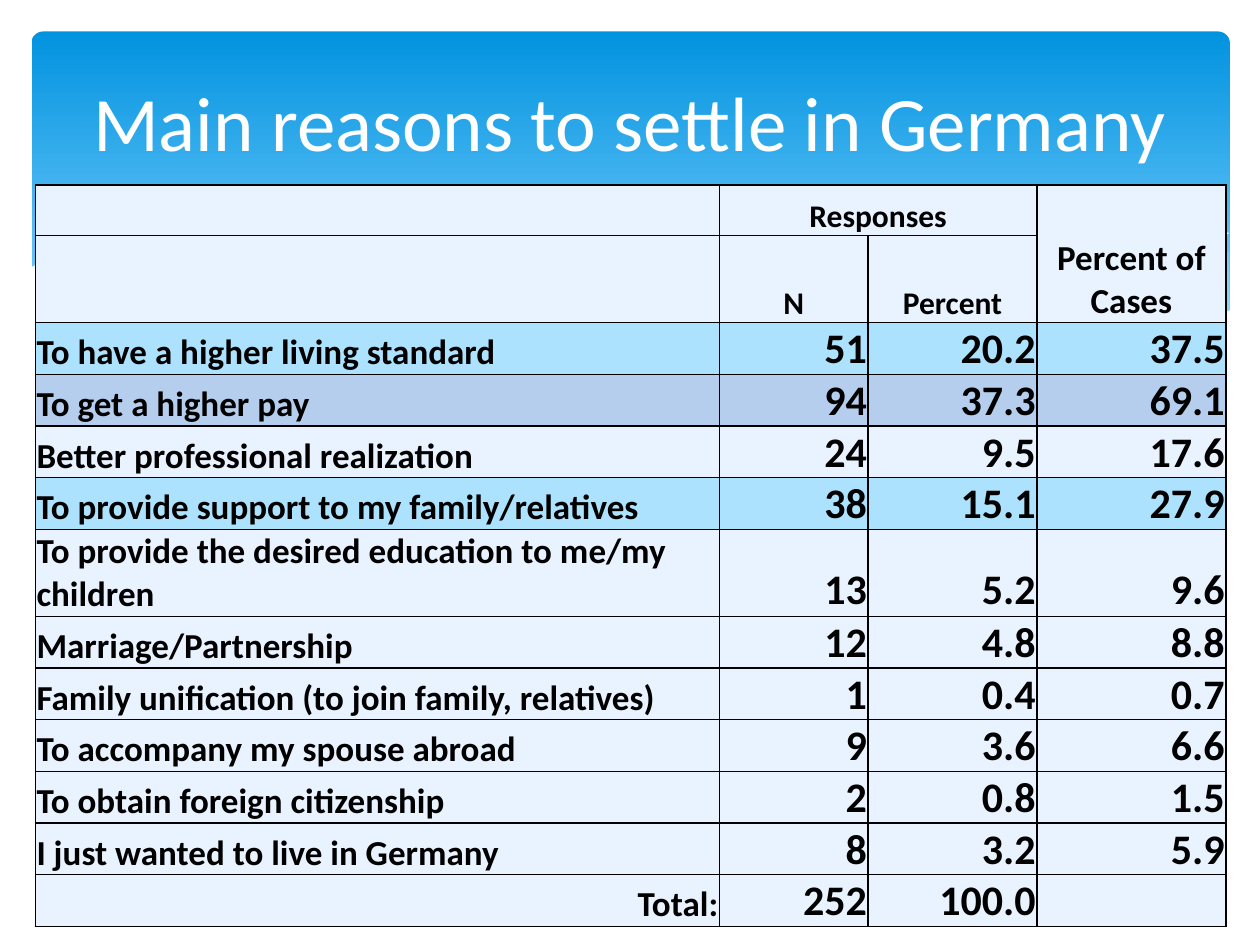
from dataclasses import dataclass

import pptx
import pptx.util
import pptx.dml.color
import pptx.enum.shapes
import pptx.enum.text
import pptx.oxml
import pptx.oxml.ns

Inches = pptx.util.Inches
Pt = pptx.util.Pt
ALIGN = pptx.enum.text.PP_ALIGN
ANCHOR = pptx.enum.text.MSO_ANCHOR


@dataclass(frozen=True)
class Theme:
    font: str = "Calibri"
    white: str = "FFFFFF"
    black: str = "000000"
    band_top: str = "0293E0"
    band_bottom: str = "83D3FE"
    wave: str = "C6E7FC"
    plain: str = "E8F3FF"
    notable: str = "ADE2FE"
    leading: str = "B5CEED"
    title_size: int = 44
    header_size: int = 18
    label_size: int = 20
    value_size: int = 24


THEME = Theme()

# Wave outlines, in inches from the top left of the header band.
RIGHT_WAVE = [
    (9.5, 1.75), (9.1, 1.82), (8.66, 1.91), (8.36, 1.98), (7.54, 2.17), (6.81, 2.32),
    (6.36, 2.4), (6.8, 2.46), (7.2, 2.5), (7.67, 2.52), (8.1, 2.52), (8.47, 2.49),
    (8.8, 2.44), (9.1, 2.37), (9.38, 2.27), (9.51, 2.22)]
MIDDLE_WAVE = [
    (8.68, 2.48), (8.12, 2.4), (7.5, 2.29), (6.81, 2.15), (6.04, 1.97), (5.59, 1.86),
    (5.16, 1.78), (4.77, 1.71), (4.4, 1.66), (3.95, 1.62), (3.55, 1.6), (3.19, 1.61),
    (2.88, 1.63), (2.61, 1.66), (3.17, 1.74), (3.79, 1.86), (4.66, 2.07), (5.41, 2.23),
    (6.09, 2.36), (6.7, 2.45), (7.23, 2.51), (7.71, 2.53), (8.13, 2.53), (8.51, 2.5)]
LONG_LINE = [
    (2.84, 1.7), (3.19, 1.65), (3.62, 1.62), (4.08, 1.62), (4.64, 1.65), (5.31, 1.72),
    (6.11, 1.83), (7.02, 2.01), (7.7, 2.16), (8.44, 2.36), (8.82, 2.47)]
SHORT_LINE = [
    (5.88, 2.32), (6.47, 2.16), (7.23, 1.98), (8.11, 1.79), (8.7, 1.69), (9.13, 1.63),
    (9.5, 1.6)]
WHITE_WAVE = [
    (9.52, 2.21), (9.25, 2.31), (8.95, 2.4), (8.62, 2.46), (8.25, 2.5), (7.84, 2.52),
    (7.36, 2.5), (6.83, 2.45), (6.23, 2.37), (5.54, 2.25), (4.78, 2.08), (4.22, 1.95),
    (3.66, 1.82), (3.15, 1.72), (2.67, 1.65), (2.25, 1.61), (1.86, 1.59), (1.52, 1.59),
    (1.21, 1.6), (0.94, 1.62), (0.7, 1.66), (0.51, 1.7), (0.34, 1.74), (0.21, 1.78),
    (0.11, 1.82), (0.04, 1.85), (-0.02, 1.88), (-0.02, 3.04), (9.52, 3.04)]

REASONS = [
    ("To have a higher living standard", "51", "20.2", "37.5", THEME.notable),
    ("To get a higher pay", "94", "37.3", "69.1", THEME.leading),
    ("Better professional realization", "24", "9.5", "17.6", THEME.plain),
    ("To provide support to my family/relatives", "38", "15.1", "27.9", THEME.notable),
    ("To provide the desired education to me/my children", "13", "5.2", "9.6", THEME.plain),
    ("Marriage/Partnership", "12", "4.8", "8.8", THEME.plain),
    ("Family unification (to join family, relatives)", "1", "0.4", "0.7", THEME.plain),
    ("To accompany my spouse abroad", "9", "3.6", "6.6", THEME.plain),
    ("To obtain foreign citizenship", "2", "0.8", "1.5", THEME.plain),
    ("I just wanted to live in Germany", "8", "3.2", "5.9", THEME.plain),
    ("Total:", "252", "100.0", "", THEME.plain),
]
COLUMN_WIDTHS = (5.43, 1.18, 1.34, 1.5)
FIRST_ROW, ONE_LINE_ROW, TWO_LINE_ROW = 0.39, 0.41, 0.69
TWO_LINE_ROWS = (1, 6)


def rgb(value):
    return pptx.dml.color.RGBColor.from_string(value)


def set_all(target, values):
    for name, value in values.items():
        setattr(target, name, value)


def paint(fill, color, alpha=None):
    """Fill with one colour; alpha is the opacity in percent."""
    fill.solid()
    fill.fore_color.rgb = rgb(color)
    if alpha is not None:
        color_element = fill._xPr.find(".//" + pptx.oxml.ns.qn("a:srgbClr"))
        color_element.append(pptx.oxml.parse_xml(
            f'<a:alpha {pptx.oxml.ns.nsdecls("a")} val="{alpha * 1000}"/>'))


def write(frame, text, size, color, align, bold=False):
    paragraph = frame.paragraphs[0]
    paragraph.alignment = align
    run = paragraph.add_run()
    run.text = text
    set_all(run.font, {"name": THEME.font, "size": Pt(size), "bold": bold})
    run.font.color.rgb = rgb(color)


def add_curve(slide, left, top, points, close):
    places = [(Inches(left + x), Inches(top + y)) for x, y in points]
    builder = slide.shapes.build_freeform(*places[0], scale=1.0)
    builder.add_line_segments(places[1:], close=close)
    shape = builder.convert_to_shape()
    shape.shadow.inherit = False
    return shape


def add_header_band(slide, left, top, width, height):
    band = slide.shapes.add_shape(
        pptx.enum.shapes.MSO_SHAPE.ROUNDED_RECTANGLE,
        Inches(left), Inches(top), Inches(width), Inches(height))
    band.adjustments[0] = 0.034
    band.shadow.inherit = False
    band.line.fill.background()
    band.fill.gradient()
    band.fill.gradient_angle = 270
    stops = ((0, THEME.band_top), (0.9, THEME.band_bottom))
    for stop, (position, color) in zip(band.fill.gradient_stops, stops):
        stop.position = position
        stop.color.rgb = rgb(color)

    for points, alpha in ((RIGHT_WAVE, 29), (MIDDLE_WAVE, 40)):
        wave = add_curve(slide, left, top, points, True)
        paint(wave.fill, THEME.wave, alpha)
        wave.line.fill.background()
    for points in (LONG_LINE, SHORT_LINE):
        curve = add_curve(slide, left, top, points, False)
        curve.fill.background()
        curve.line.color.rgb = rgb(THEME.white)
        curve.line.width = Pt(0)
    cover = add_curve(slide, left, top, WHITE_WAVE, True)
    paint(cover.fill, THEME.white)
    cover.line.fill.background()


def add_title(slide, left, top, width, height):
    box = slide.shapes.add_textbox(Inches(left), Inches(top), Inches(width), Inches(height))
    set_all(box.text_frame, {"word_wrap": True, "vertical_anchor": ANCHOR.MIDDLE})
    write(box.text_frame, "Main reasons to settle in Germany",
          THEME.title_size, THEME.white, ALIGN.CENTER)


def add_borders(cell):
    properties = cell._tc.get_or_add_tcPr()
    for side in "LRTB":
        properties.append(pptx.oxml.parse_xml(
            f'<a:ln{side} {pptx.oxml.ns.nsdecls("a")} w="12700"><a:solidFill>'
            f'<a:srgbClr val="{THEME.black}"/></a:solidFill></a:ln{side}>'))


def fill_cell(cell, text, size, align):
    set_all(cell, {"vertical_anchor": ANCHOR.BOTTOM, "margin_left": Inches(0.01),
                   "margin_right": Inches(0.01), "margin_top": Inches(0.01),
                   "margin_bottom": 0})
    write(cell.text_frame, text, size, THEME.black, align, bold=True)


def add_reasons_table(slide, left, top, width, height):
    table = slide.shapes.add_table(
        len(REASONS) + 2, len(COLUMN_WIDTHS),
        Inches(left), Inches(top), Inches(width), Inches(height)).table
    set_all(table, {"first_row": False, "horz_banding": False})
    for column, share in zip(table.columns, COLUMN_WIDTHS):
        column.width = Inches(width * share / sum(COLUMN_WIDTHS))
    for index, row in enumerate(table.rows):
        row.height = Inches(TWO_LINE_ROW if index in TWO_LINE_ROWS else ONE_LINE_ROW)
    table.rows[0].height = Inches(FIRST_ROW)

    fills = [THEME.plain] * 2 + [reason[-1] for reason in REASONS]
    for row, color in zip(table.rows, fills):
        for cell in row.cells:
            add_borders(cell)
            paint(cell.fill, color)

    table.cell(0, 1).merge(table.cell(0, 2))
    table.cell(0, 3).merge(table.cell(1, 3))
    headers = ((0, 1, "Responses", THEME.header_size), (1, 1, "N", THEME.header_size),
               (1, 2, "Percent", THEME.header_size),
               (0, 3, "Percent of Cases", THEME.label_size))
    for row, column, text, size in headers:
        fill_cell(table.cell(row, column), text, size, ALIGN.CENTER)

    for row, (label, *values, _) in enumerate(REASONS, start=2):
        label_align = ALIGN.RIGHT if label == "Total:" else ALIGN.LEFT
        fill_cell(table.cell(row, 0), label, THEME.label_size, label_align)
        for column, value in enumerate(values, start=1):
            if value:
                fill_cell(table.cell(row, column), value, THEME.value_size, ALIGN.RIGHT)


def main():
    presentation = pptx.Presentation()
    set_all(presentation, {"slide_width": Inches(10), "slide_height": Inches(7.5)})
    slide = presentation.slides.add_slide(presentation.slide_layouts[6])
    add_header_band(slide, 0.25, 0.25, 9.51, 2.7)
    add_title(slide, 0.5, 0.37, 9, 1.18)
    add_reasons_table(slide, 0.28, 1.47, 9.45, 5.95)
    presentation.save("out.pptx")


if __name__ == "__main__":
    main()
